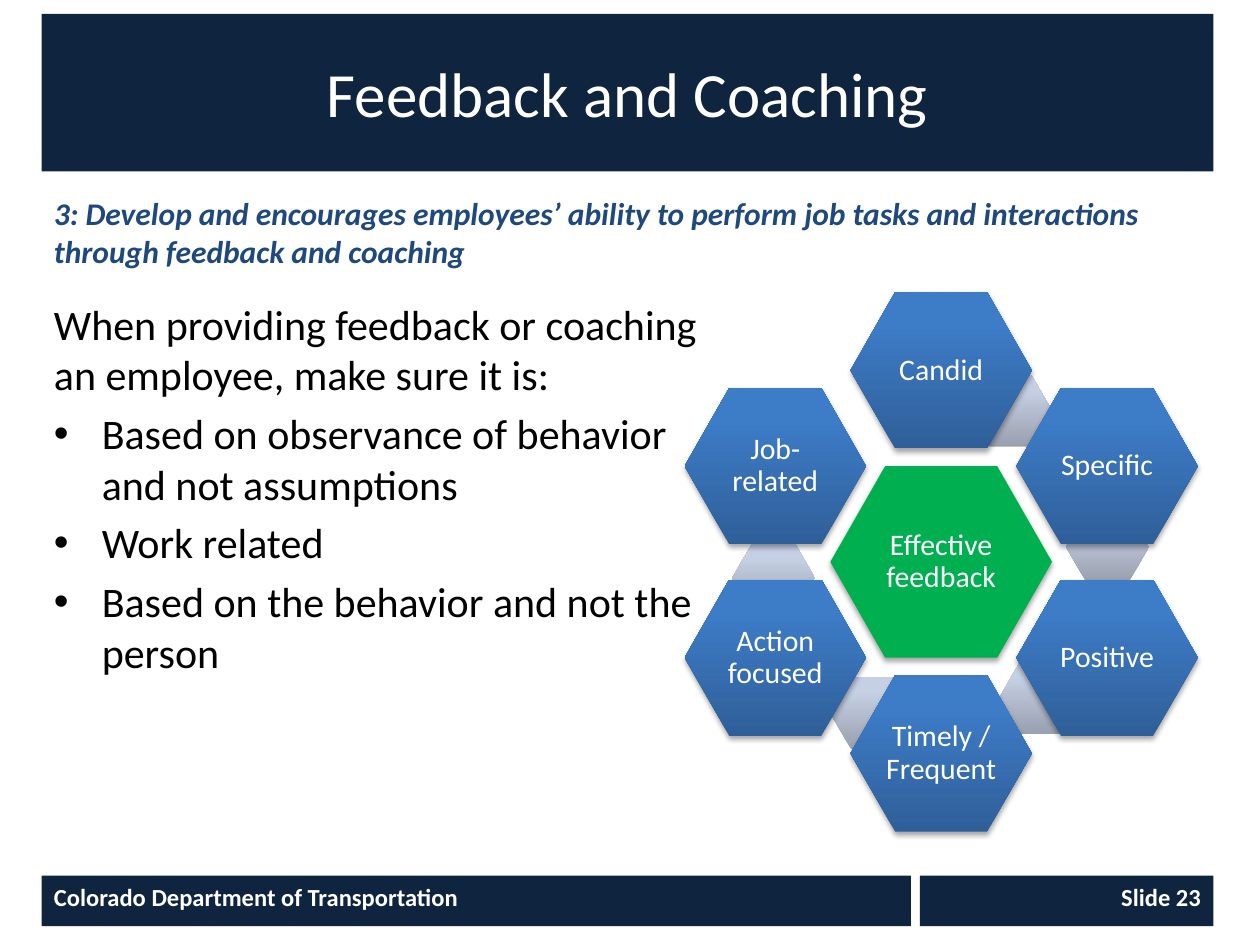
from math import cos, radians, sin

from lxml.etree import SubElement
from pptx import Presentation
from pptx.dml.color import RGBColor
from pptx.enum.shapes import MSO_SHAPE
from pptx.enum.text import MSO_ANCHOR, PP_ALIGN
from pptx.oxml.ns import qn
from pptx.util import Inches, Pt

COLORS = {
    "navy": "0F243E",
    "heading": "1F497D",
    "white": "FFFFFF",
    "black": "000000",
    "hub": "00B050",
    "node_dark": "2F5F99",
    "node_light": "3D7CC7",
    "link_dark": "99A0AF",
    "link_light": "C6D0E4",
}
FONT = "Calibri"
LEFT, CONTENT_WIDTH = 0.33, 9.3
QUALITIES = ["Candid", "Specific", "Positive", "Timely / Frequent", "Action focused", "Job-related"]
# Link centres relative to the hub, clockwise from the top.
LINK_OFFSETS = [(0.55, -1.2), (1.32, -0.12), (0.79, 1.08), (-0.55, 1.2), (-1.33, 0.13)]


def color(name):
    return RGBColor.from_string(COLORS[name])


def style(paragraph, size, color_name, bold=None, italic=None):
    font = paragraph.font
    font.name, font.size, font.bold, font.italic = FONT, Pt(size), bold, italic
    font.color.rgb = color(color_name)


def add_text_box(slide, left, top, width, height):
    box = slide.shapes.add_textbox(Inches(left), Inches(top), Inches(width), Inches(height))
    box.text_frame.word_wrap = True
    return box.text_frame


def add_title(slide, left, top, width, height):
    title = slide.shapes.title
    title.left, title.top, title.width, title.height = map(Inches, (left, top, width, height))
    title.fill.solid()
    title.fill.fore_color.rgb = color("navy")
    title.text_frame.text = "Feedback and Coaching"
    title.text_frame.vertical_anchor = MSO_ANCHOR.MIDDLE
    paragraph = title.text_frame.paragraphs[0]
    paragraph.alignment = PP_ALIGN.CENTER
    style(paragraph, 36, "white")


def add_objective(slide, left, top, width, height):
    paragraph = add_text_box(slide, left, top, width, height).paragraphs[0]
    paragraph.text = (
        "3: Develop and encourages employees’ ability to perform job tasks "
        "and interactions through feedback and coaching"
    )
    style(paragraph, 18, "heading", bold=True, italic=True)


def add_bullet(paragraph):
    properties = paragraph._p.get_or_add_pPr()
    properties.set("marL", str(Inches(0.38)))
    properties.set("indent", str(-Inches(0.38)))
    SubElement(properties, qn("a:buFont"), typeface="Arial")
    SubElement(properties, qn("a:buChar"), char="•")


def add_guidelines(slide, left, top, width, height):
    frame = add_text_box(slide, left, top, width, height)
    lines = [
        "When providing feedback or coaching an employee, make sure it is:",
        "Based on observance of behavior and not assumptions",
        "Work related",
        "Based on the behavior and not the person",
    ]
    for index, line in enumerate(lines):
        paragraph = frame.add_paragraph() if index else frame.paragraphs[0]
        paragraph.text = line
        paragraph.space_before = Pt(4.8)
        style(paragraph, 24, "black")
        if index:
            add_bullet(paragraph)


def add_hexagon(slide, center_x, center_y, width, height, adjustment=0.286):
    shape = slide.shapes.add_shape(
        MSO_SHAPE.HEXAGON,
        Inches(center_x - width / 2), Inches(center_y - height / 2), Inches(width), Inches(height),
    )
    shape.adjustments[0] = adjustment
    shape.line.fill.background()
    shape.shadow.inherit = False
    return shape


def fill_upward(shape, bottom, top):
    """Fill with a vertical gradient that starts at the bottom."""
    shape.fill.gradient()
    shape.fill.gradient_angle = 90
    for stop, position, name in zip(shape.fill.gradient_stops, (0, 0.8), (bottom, top)):
        stop.position = position
        stop.color.rgb = color(name)


def add_shadow(shape):
    effects = shape.element.spPr.find(qn("a:effectLst"))
    shadow = SubElement(
        effects, qn("a:outerShdw"),
        blurRad=str(Pt(3.1)), dist=str(Pt(1.8)), dir="5400000", rotWithShape="0",
    )
    shade = SubElement(shadow, qn("a:srgbClr"), val=COLORS["black"])
    SubElement(shade, qn("a:alpha"), val="35000")


def label_hexagon(shape, text):
    frame = shape.text_frame
    frame.word_wrap = True
    frame.vertical_anchor = MSO_ANCHOR.MIDDLE
    frame.margin_left = frame.margin_right = frame.margin_top = frame.margin_bottom = Inches(0.02)
    paragraph = frame.paragraphs[0]
    paragraph.text = text
    paragraph.alignment = PP_ALIGN.CENTER
    paragraph.line_spacing = 0.9
    style(paragraph, 17, "white")


def add_feedback_wheel(slide, left, top, width, height):
    """Place six qualities clockwise from the top around a hub, with the links behind them."""
    center_x, center_y = left + width / 2, top + height / 2
    node_width, node_height = 1.44, 1.24
    radius = (height - node_height) / 2

    for dx, dy in LINK_OFFSETS:
        link = add_hexagon(slide, center_x + dx, center_y + dy, 0.66, 0.57, 0.289)
        fill_upward(link, "link_dark", "link_light")

    hub = add_hexagon(slide, center_x, center_y, 1.76, 1.52)
    hub.fill.solid()
    hub.fill.fore_color.rgb = color("hub")
    add_shadow(hub)
    label_hexagon(hub, "Effective feedback")

    for index, quality in enumerate(QUALITIES):
        angle = radians(60 * index)
        node = add_hexagon(
            slide, center_x + radius * sin(angle), center_y - radius * cos(angle),
            node_width, node_height,
        )
        fill_upward(node, "node_dark", "node_light")
        add_shadow(node)
        label_hexagon(node, quality)


def add_footer_bar(slide, left, top, width, height, text, alignment):
    bar = slide.shapes.add_shape(
        MSO_SHAPE.RECTANGLE, Inches(left), Inches(top), Inches(width), Inches(height)
    )
    bar.fill.solid()
    bar.fill.fore_color.rgb = color("navy")
    bar.line.fill.background()
    bar.shadow.inherit = False
    bar.text_frame.vertical_anchor = MSO_ANCHOR.TOP
    paragraph = bar.text_frame.paragraphs[0]
    paragraph.text = text
    paragraph.alignment = alignment
    style(paragraph, 14, "white", bold=True)


def add_footer(slide, left, top, width, height):
    number_width, gap = 2.33, 0.07
    name_width = width - number_width - gap
    add_footer_bar(slide, left, top, name_width, height,
                   "Colorado Department of Transportation", PP_ALIGN.LEFT)
    add_footer_bar(slide, left + name_width + gap, top, number_width, height,
                   "Slide 23", PP_ALIGN.RIGHT)


def main():
    presentation = Presentation()
    presentation.slide_width, presentation.slide_height = Inches(10), Inches(7.5)
    slide = presentation.slides.add_slide(presentation.slide_layouts[5])
    add_title(slide, LEFT, 0.11, CONTENT_WIDTH, 1.25)
    add_feedback_wheel(slide, 5.43, 2.32, 4.08, 4.28)
    add_guidelines(slide, LEFT, 2.32, 5.34, 4.28)
    add_objective(slide, LEFT, 1.49, CONTENT_WIDTH, 0.71)
    add_footer(slide, LEFT, 6.95, CONTENT_WIDTH, 0.4)
    presentation.save("out.pptx")


if __name__ == "__main__":
    main()
